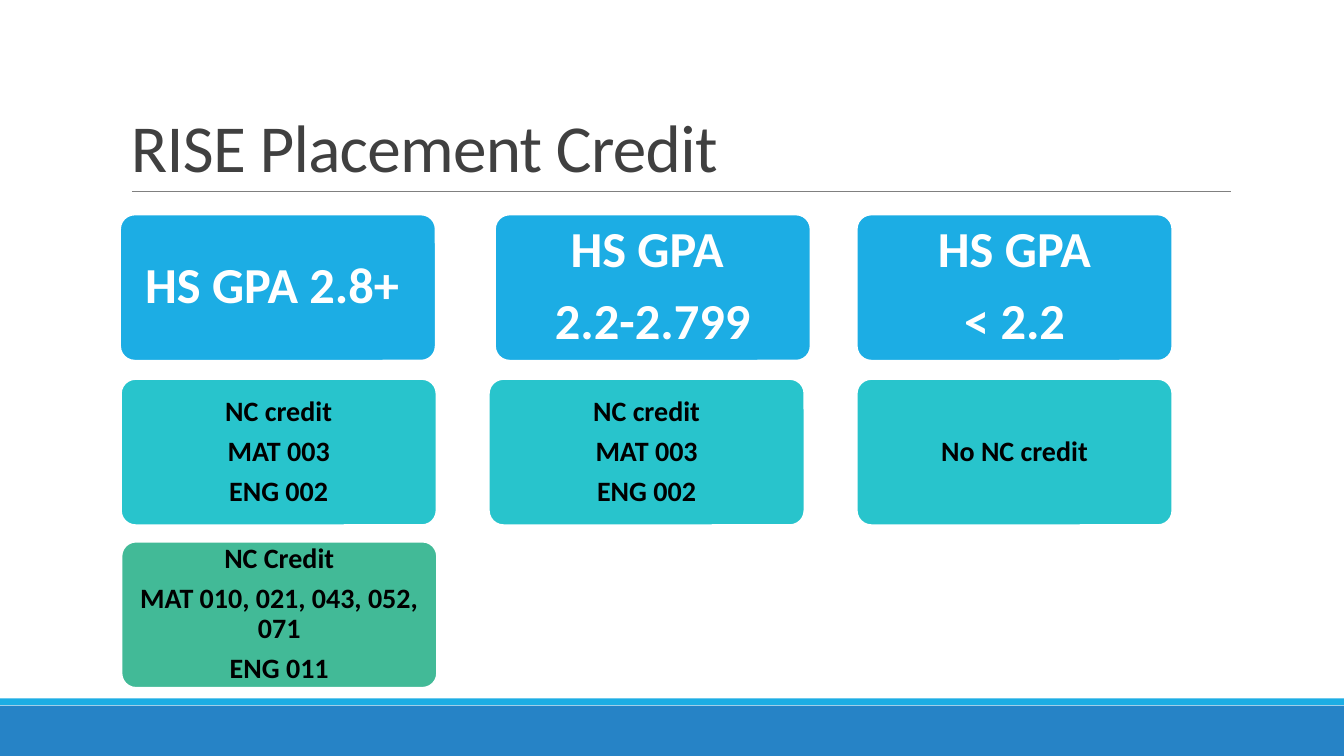
from dataclasses import dataclass

import pptx
import pptx.dml.color
import pptx.enum.shapes
import pptx.enum.text
import pptx.oxml.ns
import pptx.shapes.autoshape
import pptx.slide
import pptx.text.text
import pptx.util
from lxml import etree

Pt = pptx.util.Pt
Align = pptx.enum.text.PP_ALIGN
Anchor = pptx.enum.text.MSO_ANCHOR
Preset = pptx.enum.shapes.MSO_SHAPE


@dataclass(frozen=True)
class Theme:
    font: str = "Calibri"
    white: str = "FFFFFF"
    black: str = "000000"
    title: str = "404040"
    rule: str = "808080"
    header: str = "1CADE4"
    credit: str = "28C4CC"
    extra_credit: str = "42BA97"
    footer: str = "2683C6"
    title_size: float = 48
    header_size: float = 36
    credit_size: float = 20


@dataclass(frozen=True)
class CardStyle:
    fill: str
    text_color: str
    text_size: float
    inset: float


@dataclass(frozen=True)
class Card:
    column: int
    row: int
    style: CardStyle
    lines: tuple[str, ...]
    shift: float = 0


THEME = Theme()
HEADER = CardStyle(THEME.header, THEME.white, THEME.header_size, 14)
CREDIT = CardStyle(THEME.credit, THEME.black, THEME.credit_size, 9)
EXTRA_CREDIT = CardStyle(THEME.extra_credit, THEME.black, THEME.credit_size, 9)

SLIDE_WIDTH, SLIDE_HEIGHT = 960, 540
CARD_WIDTH, CARD_HEIGHT = 225.4, 104.4
FIRST_COLUMN, COLUMN_STEP = 86.4, 262.8
ROW_TOPS = (153.2, 270.7, 386.9)

CARDS = (
    Card(0, 0, HEADER, ("HS GPA 2.8+ ",), shift=-0.6),
    Card(1, 0, HEADER, ("HS GPA ", "2.2-2.799"), shift=4.4),
    Card(2, 0, HEADER, ("HS GPA", "< 2.2")),
    Card(0, 1, CREDIT, ("NC credit", "MAT 003", "ENG 002")),
    Card(1, 1, CREDIT, ("NC credit", "MAT 003", "ENG 002")),
    Card(2, 1, CREDIT, ("No NC credit",)),
    Card(0, 2, EXTRA_CREDIT, ("NC Credit", "MAT 010, 021, 043, 052, 071", "ENG 011"), shift=0.4),
)


def rgb(color: str) -> pptx.dml.color.RGBColor:
    return pptx.dml.color.RGBColor.from_string(color)


def write_text(
    frame: pptx.text.text.TextFrame,
    lines: tuple[str, ...],
    *,
    size: float,
    color: str,
    bold: bool = False,
    align: Align = Align.LEFT,
    anchor: Anchor = Anchor.MIDDLE,
    insets: tuple[float, float] = (7.2, 3.6),
    line_spacing: float = 0.9,
    space_after: float = 0,
    tracking: float = 0,
) -> None:
    """Fill a frame with one paragraph per line; insets are horizontal, vertical."""
    frame.word_wrap = True
    frame.vertical_anchor = anchor
    frame.margin_left = frame.margin_right = Pt(insets[0])
    frame.margin_top = frame.margin_bottom = Pt(insets[1])
    for index, line in enumerate(lines):
        para = frame.paragraphs[0] if index == 0 else frame.add_paragraph()
        para.alignment = align
        para.line_spacing = line_spacing
        para.space_after = Pt(space_after)
        span = para.add_run()
        span.text = line
        span.font.name = THEME.font
        span.font.size = Pt(size)
        span.font.bold = bold
        span.font.color.rgb = rgb(color)
        if tracking:
            span.font._element.set("spc", str(round(tracking * 100)))


def add_box(
    page: pptx.slide.Slide, preset: Preset, left: float, top: float,
    width: float, height: float, fill: str,
) -> pptx.shapes.autoshape.Shape:
    box = page.shapes.add_shape(preset, Pt(left), Pt(top), Pt(width), Pt(height))
    box.shadow.inherit = False
    box.fill.solid()
    box.fill.fore_color.rgb = rgb(fill)
    box.line.fill.background()
    return box


def add_footer(page: pptx.slide.Slide) -> None:
    add_box(page, Preset.RECTANGLE, 0, 504, SLIDE_WIDTH, 36, THEME.footer)
    add_box(page, Preset.RECTANGLE, 0, 498.8, SLIDE_WIDTH, 5, THEME.header)


def add_title(page: pptx.slide.Slide, text: str) -> None:
    """Add the title and the thin rule under it."""
    rule = page.shapes.add_connector(
        pptx.enum.shapes.MSO_CONNECTOR.STRAIGHT, Pt(94.3), Pt(136.8), Pt(879), Pt(136.8)
    )
    rule.line.color.rgb = rgb(THEME.rule)
    rule.line.width = Pt(0.5)
    etree.SubElement(rule._element.spPr, pptx.oxml.ns.qn("a:effectLst"))
    box = page.shapes.add_textbox(Pt(86.4), Pt(22.5), Pt(792), Pt(114.3))
    write_text(
        box.text_frame, (text,), size=THEME.title_size, color=THEME.title,
        anchor=Anchor.BOTTOM, line_spacing=0.85, tracking=-0.5,
    )


def add_card(page: pptx.slide.Slide, card: Card) -> None:
    style = card.style
    left = FIRST_COLUMN + card.column * COLUMN_STEP + card.shift
    box = add_box(
        page, Preset.ROUNDED_RECTANGLE, left, ROW_TOPS[card.row],
        CARD_WIDTH, CARD_HEIGHT, style.fill,
    )
    box.adjustments[0] = 0.1
    box.line.color.rgb = rgb(THEME.white)
    box.line.width = Pt(1.25)
    write_text(
        box.text_frame, card.lines, size=style.text_size, color=style.text_color,
        bold=True, align=Align.CENTER, insets=(style.inset, style.inset),
        space_after=0.35 * style.text_size,
    )


def main() -> None:
    deck = pptx.Presentation()
    deck.slide_width, deck.slide_height = Pt(SLIDE_WIDTH), Pt(SLIDE_HEIGHT)
    page = deck.slides.add_slide(deck.slide_layouts[6])
    add_footer(page)
    add_title(page, "RISE Placement Credit")
    for card in CARDS:
        add_card(page, card)
    deck.save("out.pptx")


if __name__ == "__main__":
    main()
